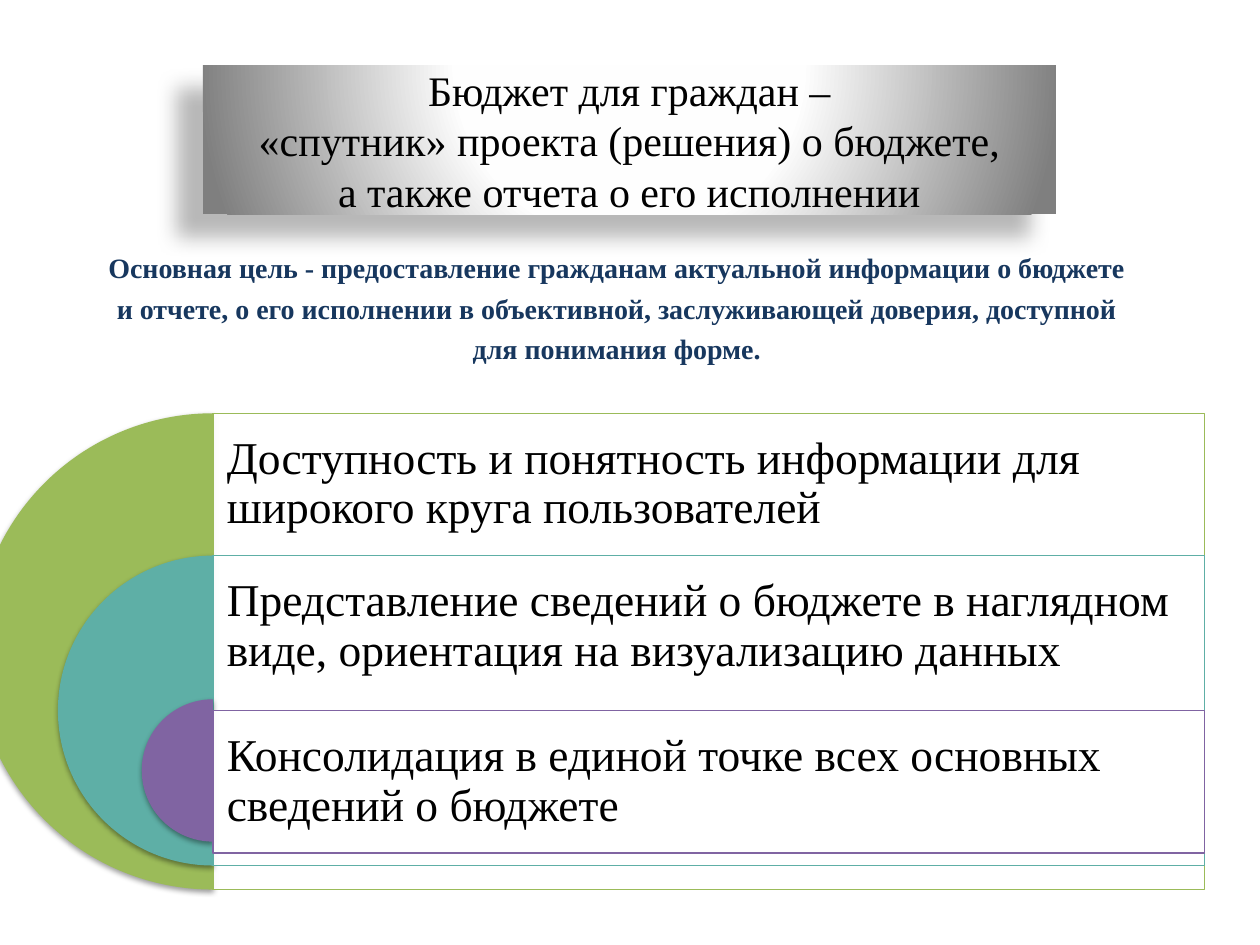
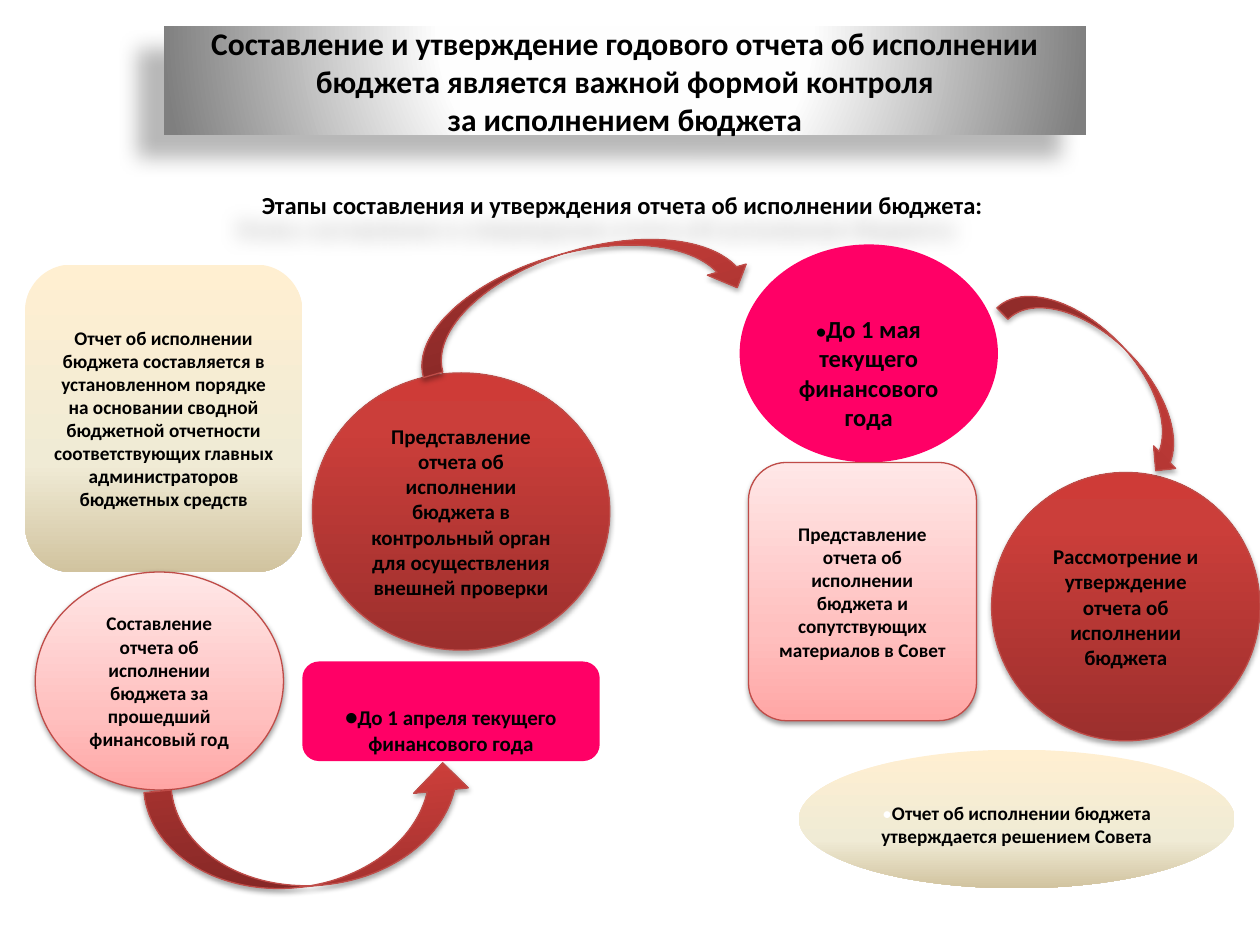
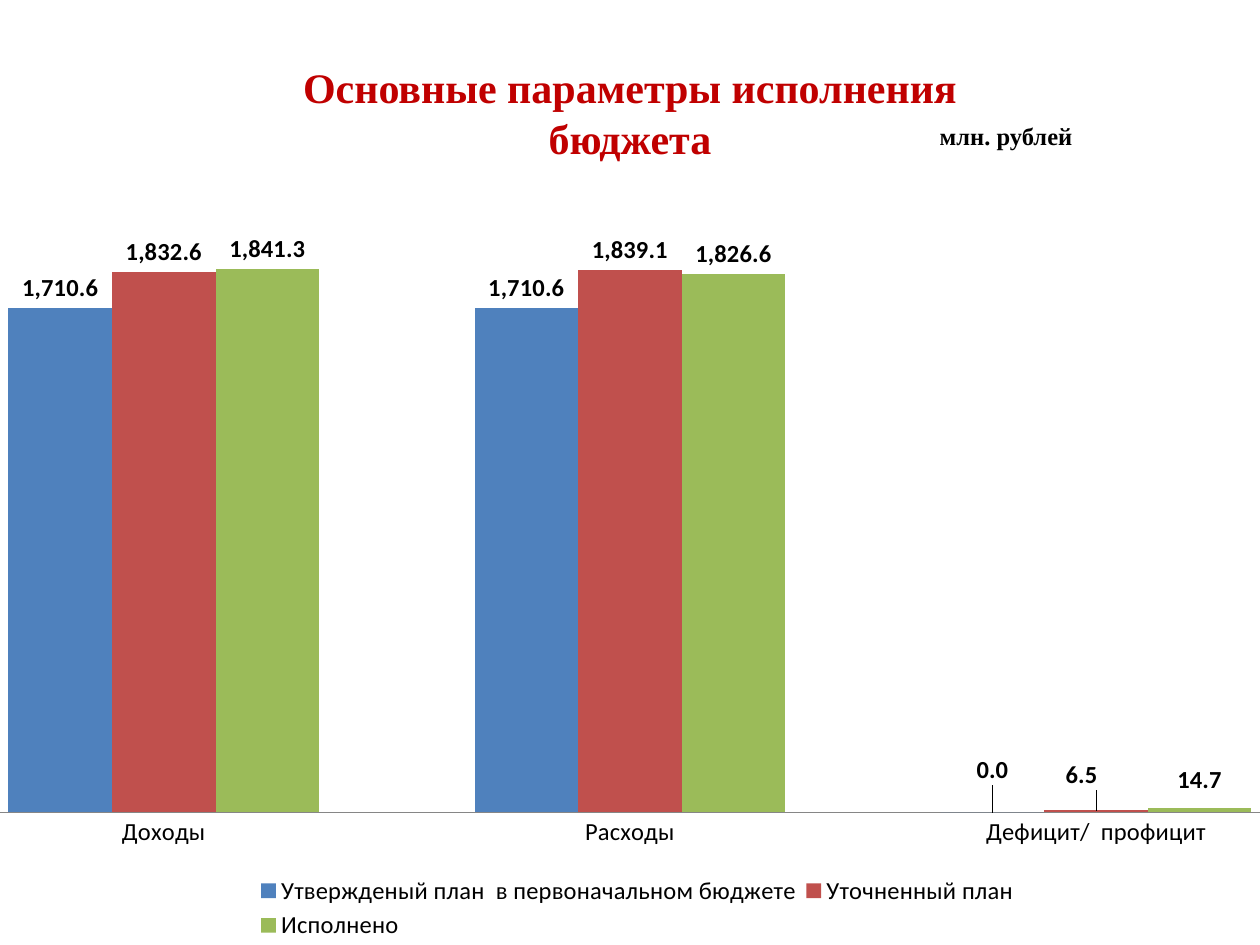
from pptx import Presentation
from pptx.chart.data import CategoryChartData
from pptx.dml.color import RGBColor
from pptx.enum.chart import XL_CHART_TYPE, XL_LABEL_POSITION, XL_LEGEND_POSITION, XL_TICK_MARK
from pptx.enum.shapes import MSO_SHAPE
from pptx.enum.text import MSO_ANCHOR, MSO_AUTO_SIZE, PP_ALIGN
from pptx.oxml import parse_xml
from pptx.oxml.ns import nsdecls
from pptx.util import Inches, Pt

CENTER, LEFT = PP_ALIGN.CENTER, PP_ALIGN.LEFT
TOP, MIDDLE = MSO_ANCHOR.TOP, MSO_ANCHOR.MIDDLE
ROUND, OVAL, RECT, PIE = (MSO_SHAPE.ROUNDED_RECTANGLE, MSO_SHAPE.OVAL,
                          MSO_SHAPE.RECTANGLE, MSO_SHAPE.PIE)
ARROW_UP, ARROW_DOWN = MSO_SHAPE.CURVED_UP_ARROW, MSO_SHAPE.CURVED_DOWN_ARROW
COLUMNS, OUTSIDE = XL_CHART_TYPE.COLUMN_CLUSTERED, XL_LABEL_POSITION.OUTSIDE_END
BOTTOM, NO_TICK = XL_LEGEND_POSITION.BOTTOM, XL_TICK_MARK.NONE

COLS, ROWS = 100, 75
TITLE_BODY, TITLE_ONLY = 1, 5
SERIF, SANS = "Times New Roman", "Calibri"
BLACK, WHITE, NAVY, DARK_RED = "000000", "FFFFFF", "17375E", "C00000"
PINK, EDGE, GREY = "FF0066", "BF4C48", "868686"
BLUE, RED, GREEN, TEAL, PURPLE = "4F81BD", "C0504D", "9BBB59", "5EAFA6", "8064A2"
NUMBER = "#,##0.0"

UPWARD = '<a:lin ang="16200000" scaled="0"/>'
DOWNWARD = '<a:lin ang="5400000" scaled="0"/>'
RADIAL = ('<a:path path="circle"><a:fillToRect l="50000" t="-80000" '
          'r="50000" b="180000"/></a:path>')
SILVER = ([(0, "FFFFFF"), (40, "FEFEFE"), (100, "7F7F7F")], RADIAL)
SAND = ([(0, "FFEFD1"), (65, "F0EBD5"), (100, "D1C39F")], DOWNWARD)
ROSE = ([(0, "FFA6A5"), (35, "FFC0BF"), (100, "FFE7E7")], UPWARD)
BRICK = ([(0, "9C2F2D"), (80, "CB3E3A"), (100, "CE3B37")], UPWARD)

BANNER_SHADOW = (28, 11.8, 19.7, 141)
SOFT_SHADOW = (38, 3.1, 1.6, 90)
BRICK_SHADOW = (35, 3.1, 1.8, 90)


def rgb(value):
    return RGBColor.from_string(value)


def layout_xml(**shares):
    modes = "".join(f'<c:{k}Mode val="edge"/>' for k in "xy" if "w" in shares)
    target = '<c:layoutTarget val="inner"/>' if shares.pop("inner", False) else ""
    values = "".join(f'<c:{k} val="{v}"/>' for k, v in shares.items())
    return parse_xml(f'<c:layout {nsdecls("c")}><c:manualLayout>{target}{modes}{values}'
                     '</c:manualLayout></c:layout>')


class Deck:
    def __init__(self):
        self.prs = Presentation()
        self.prs.slide_width, self.prs.slide_height = Inches(10), Inches(7.5)
        self.s = None

    def x(self, cols):
        return round(self.prs.slide_width * cols / COLS)

    def y(self, rows):
        return round(self.prs.slide_height * rows / ROWS)

    def box(self, at):
        left, top, width, height = at
        return self.x(left), self.y(top), self.x(width), self.y(height)

    def slide(self, layout):
        self.s = self.prs.slides.add_slide(self.prs.slide_layouts[layout])

    def text(self, sp, paragraphs, size, font=SANS, color=BLACK, bold=True, align=CENTER,
             anchor=MIDDLE, inset=(1, 0.5, 1, 0.5), gap=0, spacing=None):
        tf = sp.text_frame
        tf.word_wrap, tf.auto_size, tf.vertical_anchor = True, MSO_AUTO_SIZE.NONE, anchor
        tf.margin_left, tf.margin_right = self.x(inset[0]), self.x(inset[2])
        tf.margin_top, tf.margin_bottom = self.y(inset[1]), self.y(inset[3])
        for i, runs in enumerate(paragraphs):
            p = tf.paragraphs[0] if i == 0 else tf.add_paragraph()
            p.alignment = align
            p.space_before = Pt(gap if i else 0)
            if spacing:
                p.line_spacing = spacing
            for run in [(runs, {})] if isinstance(runs, str) else runs:
                words, own = run
                r = p.add_run()
                r.text = words
                r.font.name, r.font.size = font, Pt(own.get("size", size))
                r.font.bold = own.get("bold", bold)
                r.font.color.rgb = rgb(own.get("color", color))

    def paint(self, sp, fill=None, line=None, shadow=None, alpha=None):
        props = sp.element.spPr
        if isinstance(fill, tuple):
            stops, direction = fill
            marks = "".join(f'<a:gs pos="{pos * 1000}"><a:srgbClr val="{c}"/></a:gs>'
                            for pos, c in stops)
            props.append(parse_xml(f'<a:gradFill {nsdecls("a")} rotWithShape="1">'
                                   f'<a:gsLst>{marks}</a:gsLst>{direction}</a:gradFill>'))
        elif fill:
            sp.fill.solid()
            sp.fill.fore_color.rgb = rgb(fill)
        else:
            sp.fill.background()
        if alpha:
            props.xpath("./a:solidFill/a:srgbClr")[0].append(
                parse_xml(f'<a:alpha {nsdecls("a")} val="{alpha * 1000}"/>'))
        if line:
            sp.line.color.rgb = rgb(line)
            sp.line.width = Pt(0.75)
        else:
            sp.line.fill.background()
        sp.shadow.inherit = False
        if shadow:
            opacity, blur, dist, angle = shadow
            props.xpath("./a:effectLst")[0].append(parse_xml(
                f'<a:outerShdw {nsdecls("a")} blurRad="{Pt(blur)}" dist="{Pt(dist)}" '
                f'dir="{angle * 60000}" algn="ctr" rotWithShape="0"><a:srgbClr val="{BLACK}">'
                f'<a:alpha val="{opacity * 1000}"/></a:srgbClr></a:outerShdw>'))

    def shape(self, kind, at, rotation=0, adjust=(), **style):
        sp = self.s.shapes.add_shape(kind, *self.box(at))
        sp.rotation = rotation
        for i, value in enumerate(adjust):
            sp.adjustments[i] = value
        self.paint(sp, **style)
        return sp

    def textbox(self, at, paragraphs, size, **style):
        sp = self.s.shapes.add_textbox(*self.box(at))
        self.text(sp, paragraphs, size, **style)

    def place(self, sp, at):
        sp.left, sp.top, sp.width, sp.height = self.box(at)
        return sp

    def title(self, at, paragraphs, size, **style):
        sp = self.place(self.s.shapes.title, at)
        self.text(sp, paragraphs, size, **style)
        return sp

    def banner(self, at, paragraphs, size, **style):
        sp = self.title(at, paragraphs, size, **style)
        sp.element.spPr.append(parse_xml(
            f'<a:prstGeom {nsdecls("a")} prst="roundRect"><a:avLst/></a:prstGeom>'))
        self.paint(sp, SILVER, shadow=BANNER_SHADOW)

    def body(self, at, paragraphs, size, **style):
        sp = self.place(self.s.placeholders[1], at)
        self.text(sp, paragraphs, size, **style)
        for p in sp.text_frame.paragraphs:
            props = p._p.get_or_add_pPr()
            props.set("marL", str(self.x(3)))
            props.set("indent", str(-self.x(3)))
            props.append(parse_xml(f'<a:buNone {nsdecls("a")}/>'))

    def column_chart(self, at, categories, series, top, nudged, lifts):
        data = CategoryChartData(number_format=NUMBER)
        data.categories = categories
        for name, _, values in series:
            data.add_series(name, values)
        chart = self.s.shapes.add_chart(COLUMNS, *self.box(at), data).chart
        chart.has_title = False
        chart.font.name, chart.font.size = SANS, Pt(12)
        chart.font.color.rgb = rgb(BLACK)
        chart.has_legend = True
        chart.legend.position, chart.legend.include_in_layout = BOTTOM, False
        chart.legend.font.size = Pt(14)
        axis = chart.category_axis
        axis.major_tick_mark = axis.minor_tick_mark = NO_TICK
        axis.tick_labels.font.size = Pt(14)
        axis.format.line.color.rgb = rgb(GREY)
        values = chart.value_axis
        values.visible = values.has_major_gridlines = False
        values.minimum_scale, values.maximum_scale = 0, top
        plot = chart.plots[0]
        plot.gap_width, plot.overlap, plot.vary_by_categories = 150, 0, False
        for bars, (_, color, _) in zip(plot.series, series):
            bars.format.fill.solid()
            bars.format.fill.fore_color.rgb = rgb(color)
            labels = bars.data_labels
            labels.show_value, labels.position = True, OUTSIDE
            labels.number_format, labels.number_format_is_linked = NUMBER, False
            label = bars.points[nudged].data_label
            label.position = OUTSIDE
            for font in (labels.font, label.font):
                font.size, font.bold = Pt(14), True
        for idx, (dx, dy) in zip(chart.element.xpath(".//c:dLbl/c:idx"), lifts):
            idx.addnext(parse_xml(f'<c:numFmt {nsdecls("c")} formatCode="{NUMBER}" '
                                  'sourceLinked="0"/>'))
            idx.addnext(layout_xml(x=dx, y=dy))
        area = chart.element.xpath(".//c:plotArea")[0]
        for old in area.xpath("./c:layout"):
            area.remove(old)
        area.insert(0, layout_xml(inner=True, x=0.02, y=0.02, w=0.96, h=0.8))
        legend = chart.element.xpath(".//c:legend")[0]
        for old in legend.xpath("./c:layout"):
            legend.remove(old)
        legend.xpath("./c:legendPos")[0].addnext(layout_xml(x=0.24, y=0.9, w=0.53, h=0.1))


def purpose_slide(d):
    d.slide(TITLE_BODY)
    d.banner((16.1, 5.2, 67.7, 11.8),
             ["Бюджет для граждан –", "«спутник» проекта (решения) о бюджете,",
              "а также отчета о его исполнении"], 24, font=SERIF, bold=False)
    d.body((3.5, 19.4, 90.9, 10.2),
           ["Основная цель - предоставление гражданам актуальной информации о бюджете",
            "и отчете, о его исполнении в объективной, заслуживающей доверия, доступной",
            "для понимания форме."], 16, font=SERIF, color=NAVY, anchor=TOP, gap=4)
    axis, width, step = 16.9, 78.7, 11.3
    principles = [
        (GREEN, 37.8, 32.8, 32.8,
         "Доступность и понятность информации для широкого круга пользователей"),
        (TEAL, 24.6, 44.1, 44.1,
         "Представление сведений о бюджете в наглядном виде, ориентация на визуализацию данных"),
        (PURPLE, 11.3, 55.5, 56.4,
         "Консолидация в единой точке всех основных сведений о бюджете"),
    ]
    for color, size, pie_top, row_top, words in principles:
        d.shape(PIE, (axis - size / 2, pie_top, size, size), adjust=(54, 162),
                fill=color, shadow=SOFT_SHADOW)
        d.shape(RECT, (axis, row_top, width, size), fill=WHITE, line=color, alpha=90)
        d.textbox((axis, row_top, width, step), [words], 26, font=SERIF, bold=False,
                  align=LEFT, inset=(1.1,) * 4, spacing=0.9)


def stages_slide(d):
    d.slide(TITLE_ONLY)
    d.banner((13, 2.1, 73.2, 8.6),
             ["Составление и утверждение годового отчета об исполнении "
              "бюджета является важной формой контроля", "за исполнением бюджета"], 18)
    heading = d.shape(ROUND, (0, 13.9, 98.8, 4.7), shadow=BANNER_SHADOW)
    d.text(heading, ["Этапы составления и утверждения отчета об исполнении бюджета:"], 14)

    sand = dict(fill=SAND)
    pink = dict(fill=PINK)
    rose = dict(fill=ROSE, line=EDGE, shadow=SOFT_SHADOW)
    brick = dict(fill=BRICK, line=EDGE, shadow=BRICK_SHADOW)
    even = (1, 0.5, 1, 0.5)
    stages = [
        (ROUND, (2, 21, 22, 24.4), sand, 11, even,
         "Отчет об исполнении бюджета составляется в установленном порядке на основании "
         "сводной бюджетной отчетности соответствующих главных администраторов "
         "бюджетных средств"),
        (OVAL, (2.8, 45.4, 19.7, 17.3), rose, 11, even,
         "Составление отчета об исполнении бюджета за прошедший финансовый год"),
        (OVAL, (24.8, 29.6, 23.6, 22), brick, 12, even,
         "Представление отчета об исполнении бюджета в контрольный орган "
         "для осуществления внешней проверки"),
        (ROUND, (24, 52.5, 23.6, 7.9), pink, 12, (1, 2.7, 1, 0),
         [("•", {"size": 14}), ("До 1 апреля текущего финансового года", {})]),
        (OVAL, (58.7, 19.4, 20.5, 17.3), pink, 14, (1, 3.1, 1, 0),
         [("•", {"size": 11}), ("До 1 мая текущего финансового года", {})]),
        (ROUND, (59.4, 36.7, 18.1, 20.5), rose, 11, even,
         "Представление отчета об исполнении бюджета и сопутствующих материалов в Совет"),
        (OVAL, (78.7, 37.5, 21.3, 21.3), brick, 12, even,
         "Рассмотрение и утверждение отчета об исполнении бюджета"),
        (OVAL, (63.4, 59.5, 34.6, 11), sand, 11, (1, 0.8, 1, 0),
         [("•", {"color": WHITE, "bold": False}),
          ("Отчет об исполнении бюджета утверждается решением Совета", {})]),
    ]
    for kind, at, style, size, inset, words in stages:
        d.text(d.shape(kind, at, **style), [words], size, inset=inset)
    for kind, at, rotation in [(ARROW_UP, (11.8, 61.6, 26, 8.7), 354.3),
                               (ARROW_DOWN, (78, 27.1, 19.3, 5), 45.7),
                               (ARROW_DOWN, (32.2, 19.9, 27.5, 6.4), 344)]:
        d.shape(kind, at, rotation, **brick)


def parameters_slide(d):
    d.slide(TITLE_ONLY)
    d.column_chart((-7.8, 16.5, 115.6, 58.5), ["Доходы", "Расходы", "Дефицит/  профицит"],
                   [("Утвержденый план  в первоначальном бюджете", BLUE, (1710.6, 1710.6, 0)),
                    ("Уточненный план", RED, (1832.6, 1839.1, 6.5)),
                    ("Исполнено", GREEN, (1841.3, 1826.6, 14.7))],
                   top=2000, nudged=2, lifts=[(0, -0.03), (-0.01, -0.02), (0, -0.01)])
    d.title((18.5, 4.4, 63, 9.1), ["Основные параметры исполнения бюджета"], 24,
            font=SERIF, color=DARK_RED, anchor=TOP)
    d.textbox((73.6, 9.1, 13.7, 3.4), ["млн. рублей"], 14, font=SERIF, align=LEFT, anchor=TOP)


def main():
    d = Deck()
    purpose_slide(d)
    stages_slide(d)
    parameters_slide(d)
    d.prs.save("out.pptx")


if __name__ == "__main__":
    main()
